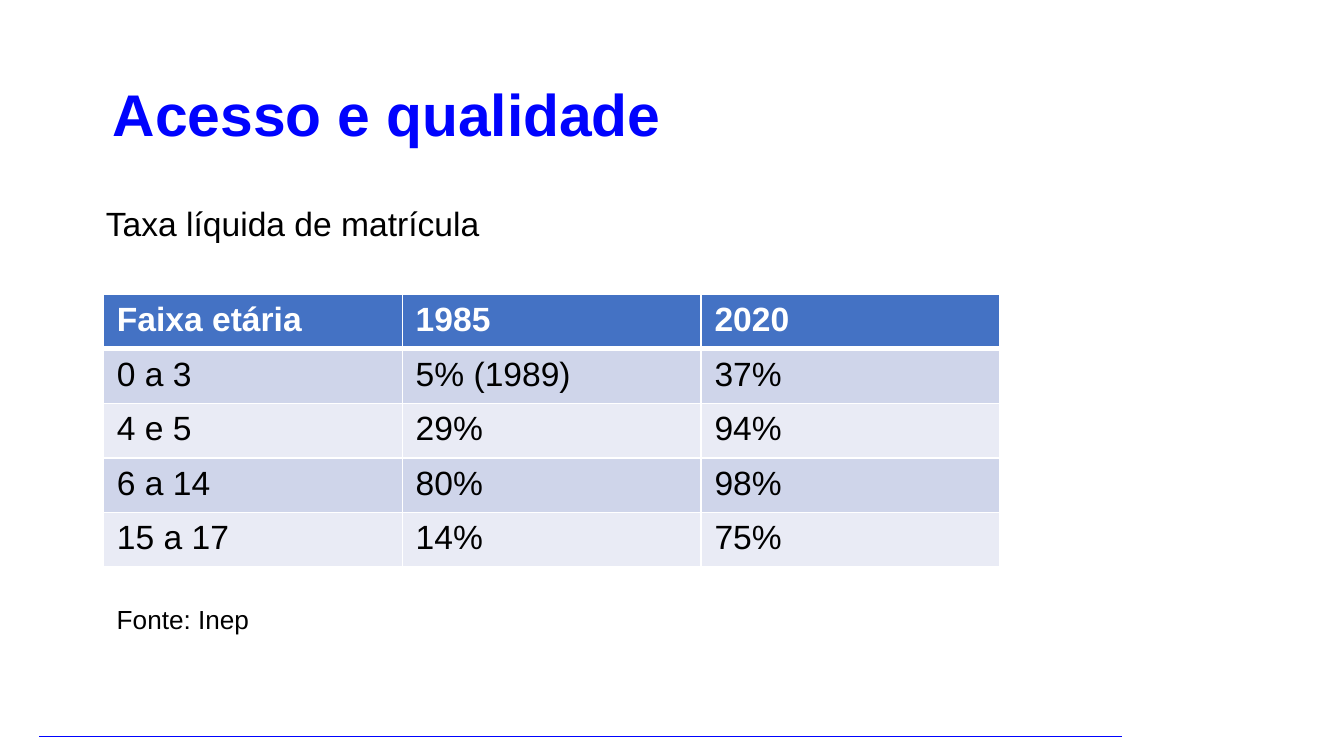
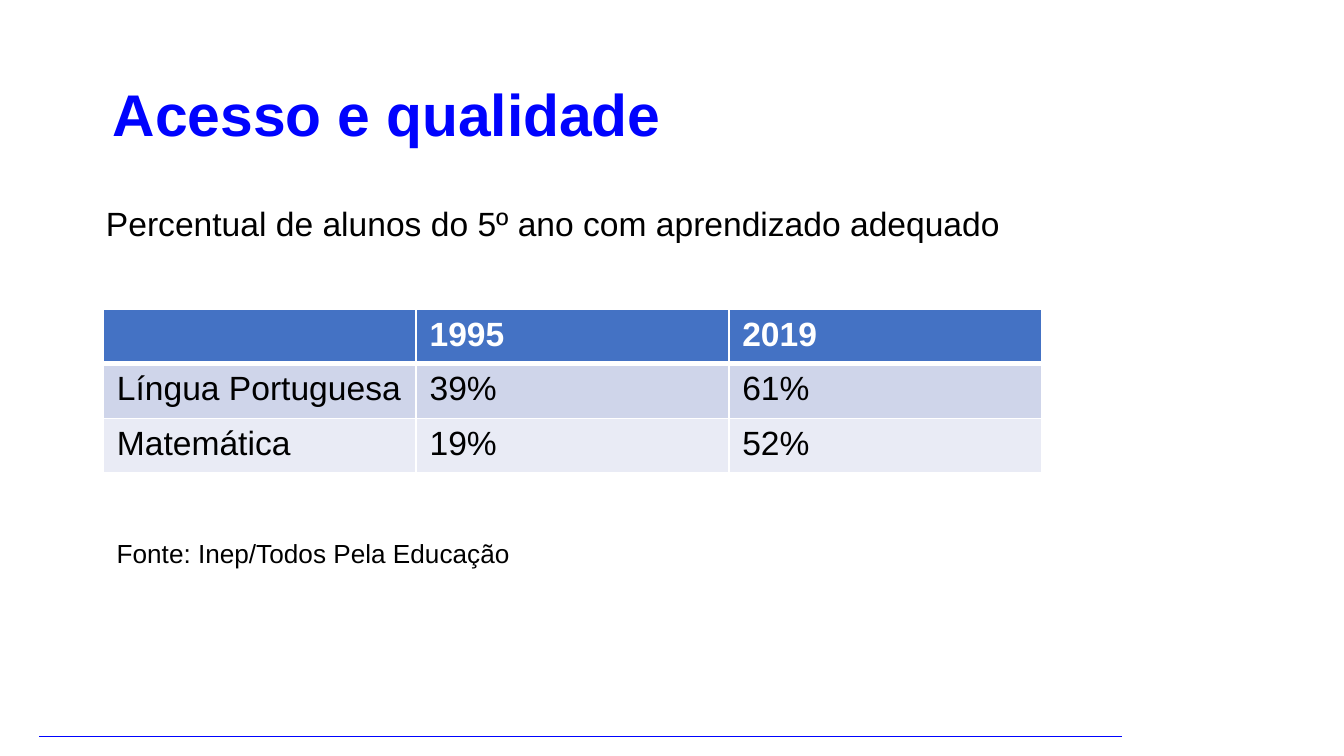
from lxml import etree
from pptx import Presentation
from pptx.dml.color import RGBColor
from pptx.enum.shapes import MSO_CONNECTOR
from pptx.enum.text import MSO_ANCHOR, MSO_AUTO_SIZE, PP_ALIGN
from pptx.oxml import parse_xml
from pptx.oxml.ns import nsdecls, qn
from pptx.util import Inches, Pt

STRAIGHT = MSO_CONNECTOR.STRAIGHT
MIDDLE = MSO_ANCHOR.MIDDLE
LEFT = PP_ALIGN.LEFT
NO_FIT, GROW = MSO_AUTO_SIZE.NONE, MSO_AUTO_SIZE.SHAPE_TO_FIT_TEXT

FONT = "Arial"
COLORS = {
    "blue": "0003FE",
    "black": "000000",
    "white": "FFFFFF",
    "header": "4472C4",
    "band_dark": "CFD5EA",
    "band_light": "E9EBF5",
}
TITLE_ONLY = 5
TABLE_LEFT = 0.77


def rgb(name):
    return RGBColor.from_string(COLORS[name])


class Deck:
    """Shared style and the slide being filled."""

    def __init__(self):
        self.prs = Presentation()
        self.prs.slide_width = Inches(10)
        self.prs.slide_height = Inches(10) * 9 // 16
        self.s = None

    def add_slide(self, title):
        self.s = self.prs.slides.add_slide(self.prs.slide_layouts[TITLE_ONLY])
        self.rule()
        self.title(title)

    def run(self, p, text, size, color="black", bold=False):
        r = p.add_run()
        r.text = text
        r.font.name = FONT
        r.font.size = Pt(size)
        r.font.bold = bold
        r.font.color.rgb = rgb(color)

    def rule(self):
        line = self.s.shapes.add_connector(
            STRAIGHT, Inches(8.35), Inches(5.48), Inches(0.29), Inches(5.48))
        line.line.color.rgb = rgb("blue")
        line.line.width = Pt(0.75)
        etree.SubElement(line._element.spPr, qn("a:effectLst"))

    def title(self, text):
        sp = self.s.shapes.title
        sp.left, sp.top = Inches(TABLE_LEFT), Inches(0.66)
        sp.width, sp.height = Inches(7.9), Inches(0.36)
        tf = sp.text_frame
        tf.auto_size = NO_FIT
        tf.word_wrap = True
        tf.vertical_anchor = MIDDLE
        tf.margin_left = tf.margin_right = Inches(0.07)
        tf.margin_top = tf.margin_bottom = Inches(0.07)
        p = tf.paragraphs[0]
        p.alignment = LEFT
        self.run(p, text, 31.5, "blue", bold=True)

    def label(self, text, left, top, width, height, size):
        sp = self.s.shapes.add_textbox(
            Inches(left), Inches(top), Inches(width), Inches(height))
        tf = sp.text_frame
        tf.word_wrap = False
        tf.auto_size = GROW
        self.run(tf.paragraphs[0], text, size)

    def subtitle(self, text, width):
        self.label(text, 0.69, 1.46, width, 0.4, 18)

    def source(self, text, top, width):
        self.label(text, TABLE_LEFT, top, width, 0.34, 14)

    def borders(self, cell, top, bottom):
        tcPr = cell._tc.get_or_add_tcPr()
        for side, width in (("L", 1), ("R", 1), ("T", top), ("B", bottom)):
            tcPr.append(parse_xml(
                f'<a:ln{side} {nsdecls("a")} w="{Pt(width)}"><a:solidFill>'
                f'<a:srgbClr val="{COLORS["white"]}"/></a:solidFill></a:ln{side}>'))

    def table(self, rows, top, width, height):
        table = self.s.shapes.add_table(
            len(rows), len(rows[0]), Inches(TABLE_LEFT), Inches(top),
            Inches(width), Inches(height)).table
        for i, values in enumerate(rows):
            header = i == 0
            fill = "header" if header else ("band_light", "band_dark")[i % 2]
            for j, text in enumerate(values):
                cell = table.cell(i, j)
                # The thick rule lies between header and first row
                self.borders(cell, 3 if i == 1 else 1, 3 if header else 1)
                cell.fill.solid()
                cell.fill.fore_color.rgb = rgb(fill)
                p = cell.text_frame.paragraphs[0]
                if text:
                    self.run(p, text, 18, "white" if header else "black", header)
                else:
                    p.font.size = Pt(18)


def main():
    deck = Deck()

    # Enrolment rate
    deck.add_slide("Acesso e qualidade")
    deck.table([
        ("Faixa etária", "1985", "2020"),
        ("0 a 3", "5% (1989)", "37%"),
        ("4 e 5", "29%", "94%"),
        ("6 a 14", "80%", "98%"),
        ("15 a 17", "14%", "75%"),
    ], top=2.19, width=6.67, height=2.03)
    deck.source("Fonte: Inep", top=4.44, width=1.19)
    deck.subtitle("Taxa líquida de matrícula", width=3.03)

    # Adequate learning
    deck.add_slide("Acesso e qualidade")
    deck.source("Fonte: Inep/Todos Pela Educação", top=3.95, width=3.16)
    deck.table([
        ("", "1995", "2019"),
        ("Língua Portuguesa", "39%", "61%"),
        ("Matemática", "19%", "52%"),
    ], top=2.3, width=6.98, height=1.22)
    deck.subtitle("Percentual de alunos do 5º ano com aprendizado adequado", width=6.98)

    deck.prs.save("out.pptx")


if __name__ == "__main__":
    main()
